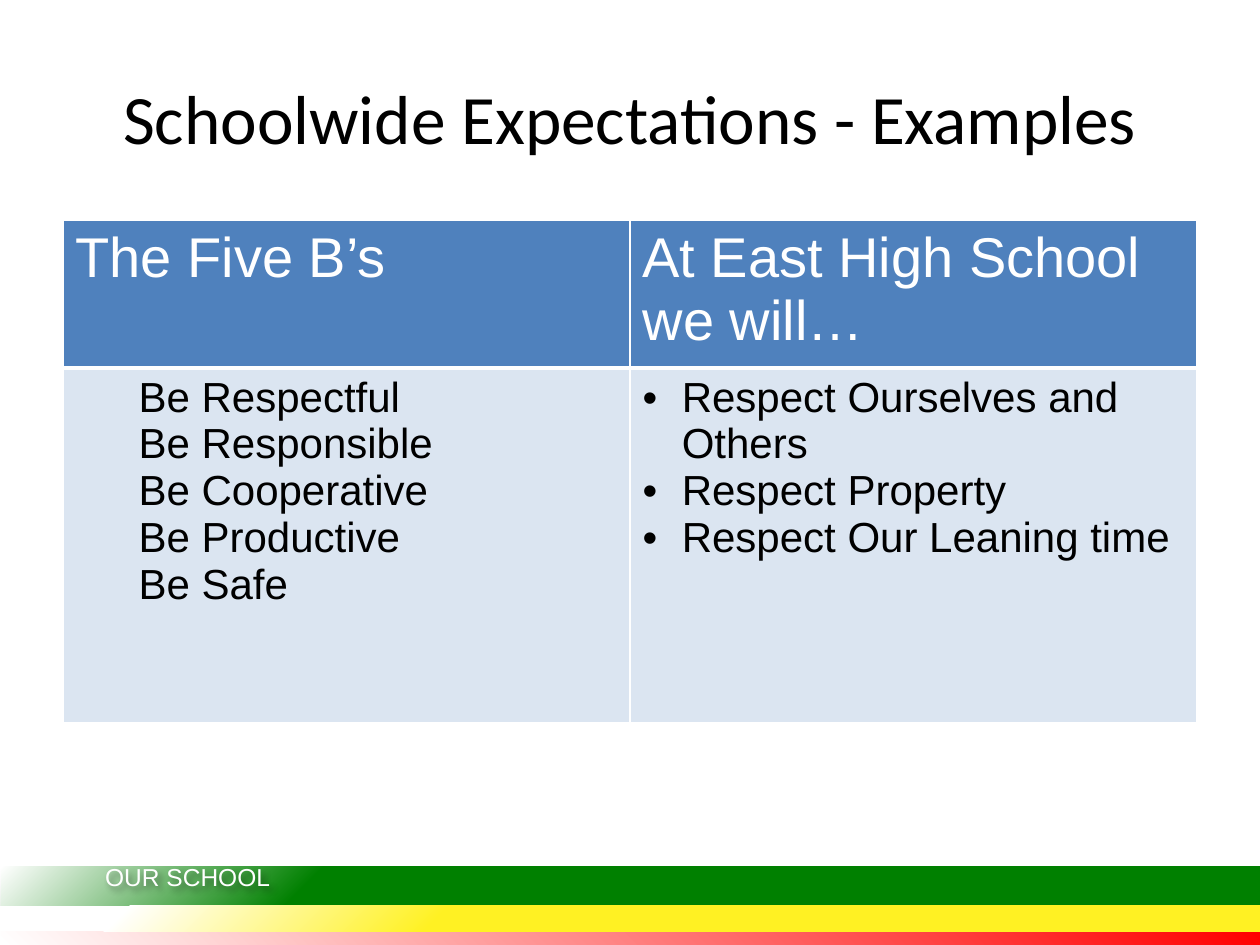
from lxml import etree
from pptx import Presentation
from pptx.dml.color import RGBColor
from pptx.enum.shapes import MSO_SHAPE
from pptx.enum.text import MSO_ANCHOR, MSO_AUTO_SIZE, PP_ALIGN
from pptx.oxml.ns import qn
from pptx.util import Cm, Pt

RECTANGLE = MSO_SHAPE.RECTANGLE
MIDDLE = MSO_ANCHOR.MIDDLE
CENTER = PP_ALIGN.CENTER
NO_AUTOFIT = MSO_AUTO_SIZE.NONE
TITLE_ONLY = 5

COLORS = {
    "text": "000000", "white": "FFFFFF",
    "header": "4F81BD", "body": "DBE5F1",
    "green": "008000", "yellow": "FFF123", "red": "FF0000",
}
EXPECTATIONS = ["Be Respectful", "Be Responsible", "Be Cooperative",
                "Be Productive", "Be Safe"]
ACTIONS = ["Respect Ourselves and Others", "Respect Property",
           "Respect Our Leaning time"]


def rgb(name):
    return RGBColor.from_string(COLORS[name])


def add_element(parent, tag, **attributes):
    return etree.SubElement(parent, qn(tag), **attributes)


def add_color(parent, name):
    return add_element(parent, "a:srgbClr", val=COLORS[name])


def format_runs(paragraph, size, color, font="Arial"):
    for run in paragraph.runs:
        run.font.name = font
        run.font.size = Pt(size)
        run.font.bold = False
        run.font.color.rgb = rgb(color)


def set_corner_gradient(shape, stops, focus):
    """Radial gradient that starts at the corner given by focus."""
    shape.fill.gradient()
    gradient = shape.element.spPr.find(qn("a:gradFill"))
    for child in list(gradient):
        gradient.remove(child)
    stop_list = add_element(gradient, "a:gsLst")
    for position, color in stops:
        add_color(add_element(stop_list, "a:gs", pos=str(position * 1000)), color)
    circle = add_element(gradient, "a:path")
    circle.set("path", "circle")
    add_element(circle, "a:fillToRect", **focus)


def add_footer(slide, left, top, width):
    top_right = {"l": "100000", "b": "100000"}
    bottom_right = {"l": "100000", "t": "100000"}
    # Offset from the footer top, height, gradient stops, gradient focus
    bands = [
        (1.3, 0.3, [(0, "red"), (100, "white")], top_right),
        (0, 0.79, [(0, "green"), (75, "green"), (100, "white")], bottom_right),
        (0.79, 0.51, [(0, "yellow"), (65, "yellow"), (90, "white"),
                      (100, "white")], bottom_right),
    ]
    for offset, height, stops, focus in bands:
        band = slide.shapes.add_shape(RECTANGLE, left, top + Cm(offset),
                                      width, Cm(height))
        band.shadow.inherit = False
        band.line.fill.background()
        set_corner_gradient(band, stops, focus)

    # Footer label with a soft shadow
    label = slide.shapes.add_textbox(left + Cm(1.85), top - Cm(0.22),
                                     Cm(4.88), Cm(1.02))
    label.text_frame.word_wrap = True
    label.text_frame.text = "OUR SCHOOL"
    format_runs(label.text_frame.paragraphs[0], 14, "white")
    effects = add_element(label.element.spPr, "a:effectLst")
    shadow = add_element(effects, "a:outerShdw", blurRad="50800", dist="38100",
                         dir="2700000")
    add_element(add_color(shadow, "text"), "a:alpha", val="40000")


def place_title(slide, left, top, width, height):
    title = slide.shapes.title
    title.left, title.top, title.width, title.height = left, top, width, height
    frame = title.text_frame
    frame.text = "Schoolwide Expectations - Examples"
    frame.auto_size = NO_AUTOFIT
    frame.vertical_anchor = MIDDLE
    frame.paragraphs[0].alignment = CENTER
    format_runs(frame.paragraphs[0], 39.6, "text", "Calibri")


def set_borders(cell, widths):
    properties = cell._tc.get_or_add_tcPr()
    for index, (side, width) in enumerate(widths.items()):
        line = etree.Element(qn(f"a:ln{side}"), w=str(Pt(width)))
        add_color(add_element(line, "a:solidFill"), "white")
        properties.insert(index, line)


def fill_cell(cell, lines, size, color, fill):
    cell.fill.solid()
    cell.fill.fore_color.rgb = rgb(fill)
    cell.text_frame.text = "\n".join(lines)
    for paragraph in cell.text_frame.paragraphs:
        format_runs(paragraph, size, color)


def set_indent(paragraph, margin, indent):
    properties = paragraph._p.get_or_add_pPr()
    properties.set("marL", str(Cm(margin)))
    properties.set("indent", str(Cm(indent)))
    return properties


def add_expectations_table(slide, left, top, width, height):
    frame = slide.shapes.add_table(2, 2, left, top, width, height)
    table = frame.table
    # The header row grows to fit its two lines of text
    for row, row_height in zip(table.rows, [Cm(1.8), Cm(7.16)]):
        row.height = row_height
    frame.height = height

    # Header and body cells
    columns = [("The Five B’s", EXPECTATIONS),
               ("At East High School we will…", ACTIONS)]
    for index, (heading, lines) in enumerate(columns):
        header, body = table.cell(0, index), table.cell(1, index)
        fill_cell(header, [heading], 32, "white", "header")
        fill_cell(body, lines, 24, "text", "body")
        set_borders(header, {"L": 1, "R": 1, "T": 1, "B": 3})
        set_borders(body, {"L": 1, "R": 1, "T": 3, "B": 1})

    # Indented list on the left, bulleted list on the right
    for paragraph in table.cell(1, 0).text_frame.paragraphs:
        paragraph.level = 1
        set_indent(paragraph, 1.27, 0)
    for paragraph in table.cell(1, 1).text_frame.paragraphs:
        properties = set_indent(paragraph, 0.79, -0.79)
        add_color(add_element(properties, "a:buClr"), "text")
        add_element(properties, "a:buFont", typeface="Arial")
        add_element(properties, "a:buChar", char="•")


def main():
    presentation = Presentation()
    presentation.slide_width, presentation.slide_height = Cm(25.4), Cm(19.05)
    slide = presentation.slides.add_slide(presentation.slide_layouts[TITLE_ONLY])
    margin, content_width = Cm(1.27), Cm(22.86)
    add_footer(slide, Cm(0.02), Cm(17.47), Cm(25.4))
    place_title(slide, margin, Cm(0.76), content_width, Cm(3.18))
    add_expectations_table(slide, margin, Cm(4.45), content_width, Cm(8.33))
    presentation.save("out.pptx")


if __name__ == "__main__":
    main()
